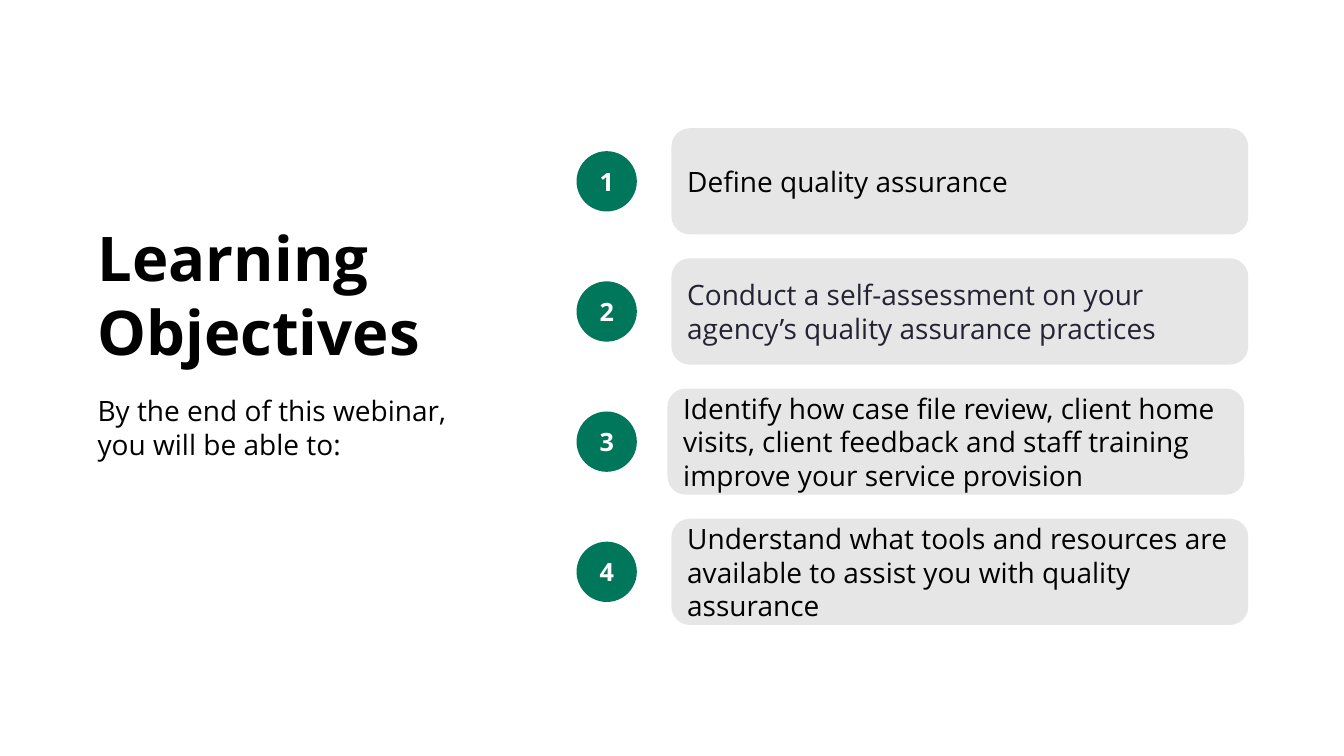
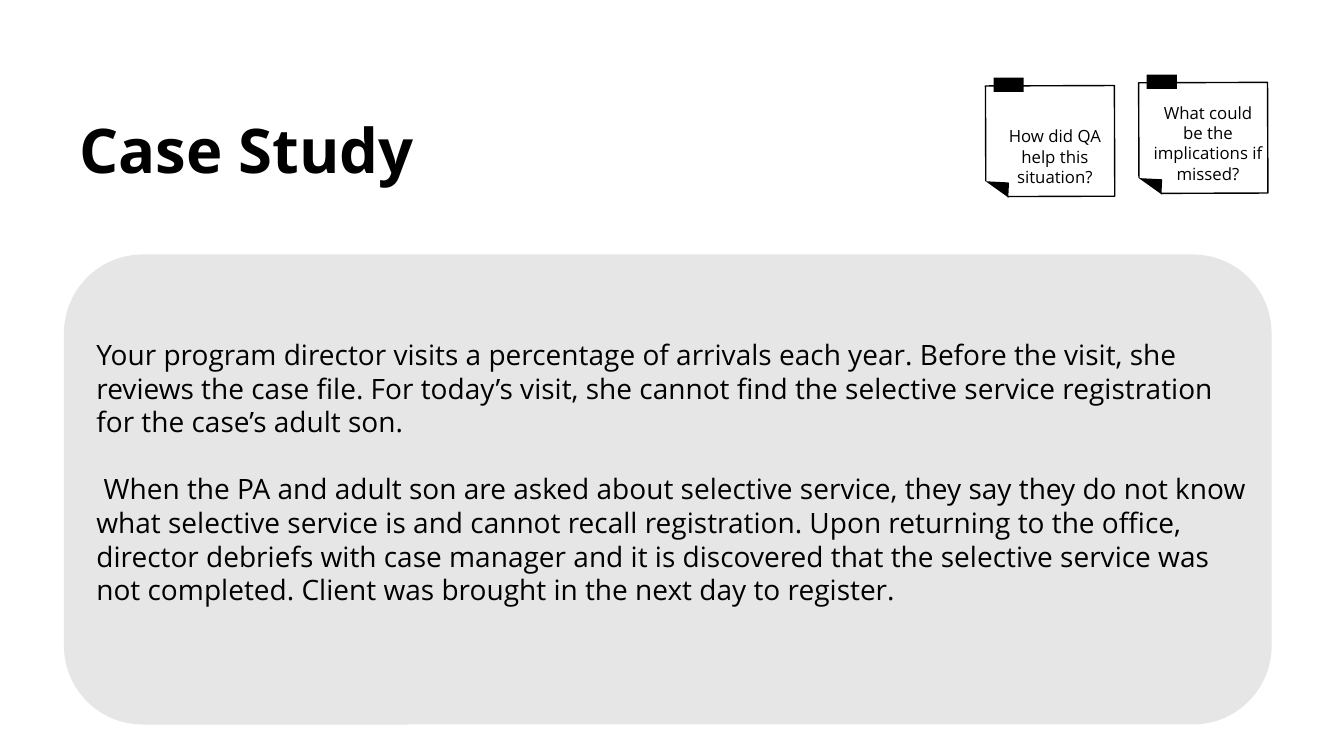
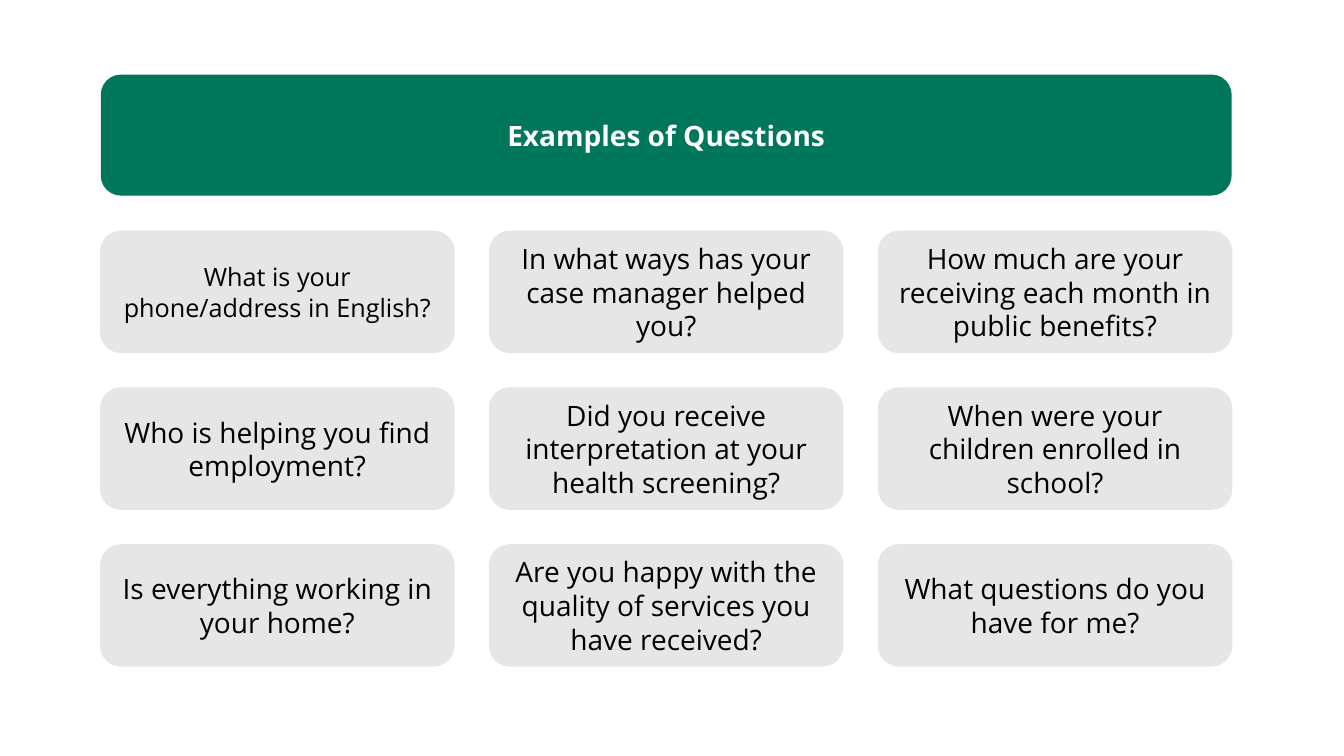
import pptx
import pptx.dml.color
import pptx.enum.shapes
import pptx.enum.text
import pptx.util

Cm = pptx.util.Cm
Pt = pptx.util.Pt
SHAPE = pptx.enum.shapes.MSO_SHAPE
ALIGN = pptx.enum.text.PP_ALIGN
ANCHOR = pptx.enum.text.MSO_ANCHOR

FONT = "Open Sans"
GREEN, GREY, BLACK, WHITE, INK = "00765A", "E7E6E6", "000000", "FFFFFF", "232333"


def rgb(value):
    """Turn a hex string into a colour."""
    return pptx.dml.color.RGBColor.from_string(value)


def write(sp, text, size=20, color=BLACK, bold=False, align=ALIGN.LEFT,
          anchor=ANCHOR.MIDDLE, gap=0):
    """Write text, one paragraph per line, into a shape."""
    tf = sp.text_frame
    tf.word_wrap = True
    tf.vertical_anchor = anchor
    for i, line in enumerate(text.split("\n")):
        p = tf.add_paragraph() if i else tf.paragraphs[0]
        p.alignment = align
        p.space_before = Pt(gap if i else 0)
        r = p.add_run()
        r.text = line
        r.font.name = FONT
        r.font.size = Pt(size)
        r.font.bold = bold
        r.font.color.rgb = rgb(color)


def add_text(shapes, box, text, anchor=ANCHOR.TOP, **style):
    """Add a wrapped text box."""
    write(shapes.add_textbox(*map(Cm, box)), text, anchor=anchor, **style)


def add_shape(shapes, kind, box, fill=None, line=None, rotation=0, text=None, **style):
    """Add a flat preset shape, with text if given."""
    sp = shapes.add_shape(kind, *map(Cm, box))
    sp.shadow.inherit = False
    sp.rotation = rotation
    if fill:
        sp.fill.solid()
        sp.fill.fore_color.rgb = rgb(fill)
    else:
        sp.fill.background()
    if line:
        sp.line.color.rgb = rgb(line)
        sp.line.width = Pt(1)
    else:
        sp.line.fill.background()
    if text:
        write(sp, text, **style)


def add_card(shapes, box, text=None, **style):
    """Add a grey rounded card."""
    add_shape(shapes, SHAPE.ROUNDED_RECTANGLE, box, GREY, GREY, text=text, **style)


def add_title(shapes, box, text):
    """Add a slide title."""
    add_text(shapes, box, text, size=44, bold=True)


def add_objective(shapes, box, number, text, shift=0, color=BLACK):
    """Add a numbered circle and its card, filling the box."""
    x, y, w, h = box
    d, indent = 1.52, 2.41
    add_shape(shapes, SHAPE.OVAL, (x, y + (h - d) / 2, d, d), GREEN, text=str(number),
              size=18, color=WHITE, bold=True, align=ALIGN.CENTER)
    add_card(shapes, (x + indent + shift, y, w - indent, h), text, color=color)


def add_note(shapes, box, text):
    """Add a taped paper note with a folded corner."""
    x, y, w, h = box
    paper = shapes.add_group_shape().shapes
    add_shape(paper, SHAPE.RECTANGLE, box, line=BLACK, rotation=359.8)
    add_shape(paper, SHAPE.RIGHT_TRIANGLE, (x, y + h - 0.35, 0.56, 0.36),
              BLACK, BLACK, rotation=182.9)
    add_shape(paper, SHAPE.RECTANGLE, (x - 0.25, y + h - 0.22, 0.76, 0.36),
              WHITE, WHITE, rotation=35.5)
    add_shape(paper, SHAPE.RECTANGLE, (x + 0.2, y - 0.2, 0.76, 0.36), BLACK, rotation=0.1)
    add_text(shapes, (x + 0.12, y, w, h - 0.12), text, size=12,
             align=ALIGN.CENTER, anchor=ANCHOR.BOTTOM)


def add_card_grid(shapes, box, rows, gap):
    """Fill the box with equal cards, each given as text and size."""
    x, y, w, h = box
    card_w = (w - gap * (len(rows[0]) - 1)) / len(rows[0])
    card_h = (h - gap * (len(rows) - 1)) / len(rows)
    for i, row in enumerate(rows):
        for j, (text, size) in enumerate(row):
            add_card(shapes, (x + j * (card_w + gap), y + i * (card_h + gap), card_w, card_h),
                     text, size=size, align=ALIGN.CENTER)


def objectives_slide(shapes):
    """Build the learning objectives slide."""
    add_title(shapes, (2.21, 5.41, 9.83, 4.01), "Learning\nObjectives")
    add_text(shapes, (2.21, 9.8, 10.59, 1.96),
             "By the end of this webinar, you will be able to:")
    objectives = [
        ("Define quality assurance", {}),
        ("Conduct a self-assessment on your agency’s quality assurance practices",
         {"color": INK}),
        ("Identify how case file review, client home visits, client feedback and "
         "staff training improve your service provision", {"shift": -0.1}),
        ("Understand what tools and resources are available to assist you with "
         "quality assurance", {}),
    ]
    for i, (text, options) in enumerate(objectives):
        add_objective(shapes, (14.53, 3.25 + 3.28 * i, 16.91, 2.64), i + 1, text, **options)


def case_study_slide(shapes):
    """Build the case study slide."""
    add_title(shapes, (1.75, 2.69, 18.49, 2.13), "Case Study")
    add_card(shapes, (1.63, 6.43, 30.4, 11.81))
    add_text(shapes, (2.18, 8.38, 29.51, 7.09),
             "Your program director visits a percentage of arrivals each year. Before the "
             "visit, she reviews the case file. For today’s visit, she cannot find the "
             "selective service registration for the case’s adult son.\n"
             " When the PA and adult son are asked about selective service, they say they "
             "do not know what selective service is and cannot recall registration. Upon "
             "returning to the office, director debriefs with case manager and it is "
             "discovered that the selective service was not completed. Client was brought "
             "in the next day to register.", gap=24)
    add_note(shapes, (24.84, 2.16, 3.25, 2.79), "How did QA help this situation?")
    add_note(shapes, (28.7, 2.08, 3.25, 2.79), "What could be the implications if missed?")


def questions_slide(shapes):
    """Build the example questions slide."""
    add_shape(shapes, SHAPE.ROUNDED_RECTANGLE, (2.54, 1.88, 28.5, 3.05), GREEN,
              text="Examples of Questions", color=WHITE, bold=True, align=ALIGN.CENTER)
    rows = [
        [("What is your phone/address in English?", 18),
         ("In what ways has your case manager helped you?", 20),
         ("How much are your receiving each month in public benefits?", 20)],
        [("Who is helping you find employment?", 20),
         ("Did you receive interpretation at your health screening?", 20),
         ("When were your children enrolled in school?", 20)],
        [("Is everything working in your home?", 20),
         ("Are you happy with the quality of services you have received?", 20),
         ("What questions do you have for me?", 20)],
    ]
    add_card_grid(shapes, (2.54, 5.83, 28.5, 10.95), rows, 0.9)


def main():
    """Build and save the presentation."""
    prs = pptx.Presentation()
    prs.slide_width, prs.slide_height = Cm(33.87), Cm(19.05)
    for build in (objectives_slide, case_study_slide, questions_slide):
        build(prs.slides.add_slide(prs.slide_layouts[6]).shapes)
    prs.save("out.pptx")


if __name__ == "__main__":
    main()
